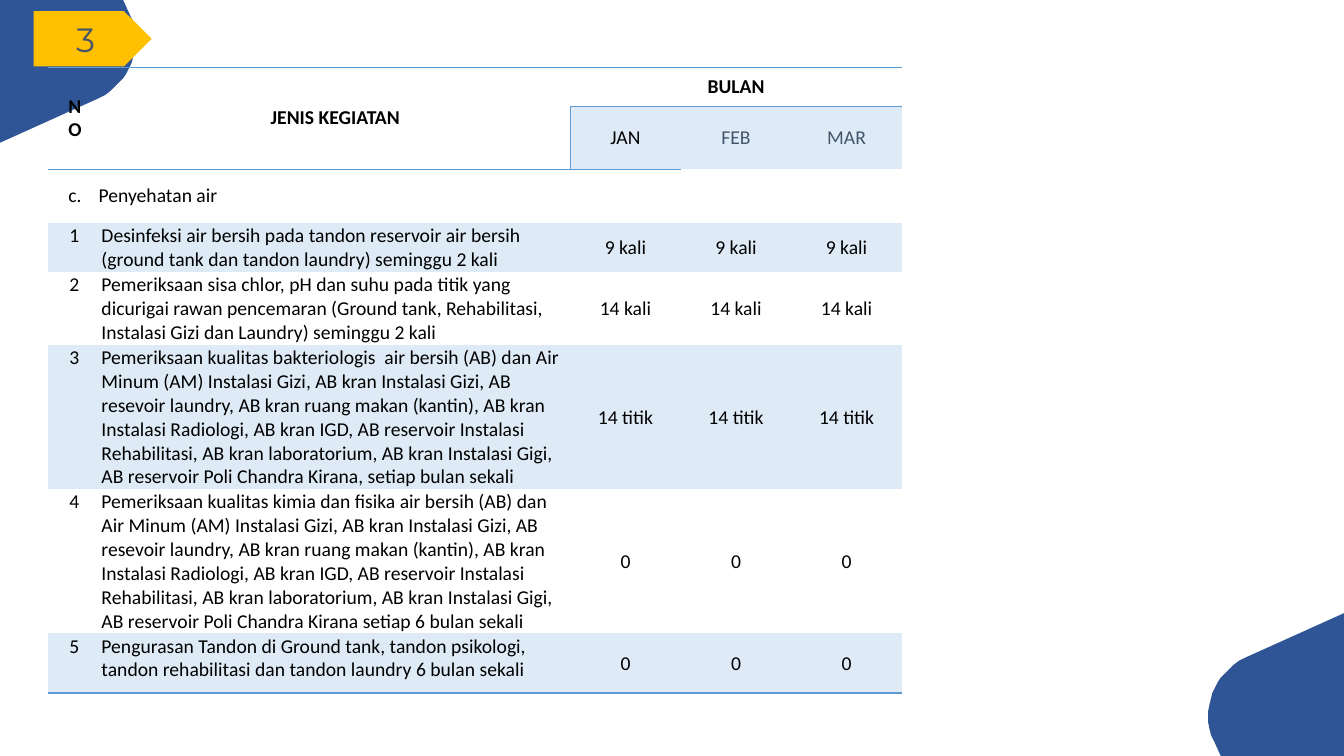
from pptx import Presentation
from pptx.dml.color import RGBColor
from pptx.enum.shapes import MSO_SHAPE as SHAPE
from pptx.enum.text import MSO_ANCHOR as ANCHOR, PP_ALIGN as ALIGN
from pptx.oxml.ns import qn
from pptx.util import Pt
from lxml.etree import SubElement

COLORS = {
    "navy": "2F5597", "gold": "FFC000", "slate": "44546A",
    "black": "000000", "line": "5B9BD5", "band": "DEEBF7",
}
PAGE_WIDTH, PAGE_HEIGHT = 960, 540
COLUMN_WIDTHS = [37.4, 335.5, 79, 79, 79]
ROW_HEIGHTS = [27.9, 45, 38.5, 34.7, 52.4, 103, 103, 42.5]
HEADER_MARGINS = (14.4, 5.4, 14.4, 5.4)
BODY_MARGINS = (0.7, 0.7, 0.7, 0)
MONTHS = ["JAN", "FEB", "MAR"]

# Activity and its target, the same in every month
ACTIVITIES = [
    ("Desinfeksi air bersih pada tandon reservoir air bersih (ground tank dan "
     "tandon laundry) seminggu 2 kali", "9 kali"),
    ("Pemeriksaan sisa chlor, pH dan suhu pada titik yang dicurigai rawan "
     "pencemaran (Ground tank, Rehabilitasi, Instalasi Gizi dan Laundry) "
     "seminggu 2 kali", "14 kali"),
    ("Pemeriksaan kualitas bakteriologis  air bersih (AB) dan Air Minum (AM) "
     "Instalasi Gizi, AB kran Instalasi Gizi, AB resevoir laundry, AB kran "
     "ruang makan (kantin), AB kran Instalasi Radiologi, AB kran IGD, AB "
     "reservoir Instalasi Rehabilitasi, AB kran laboratorium, AB kran "
     "Instalasi Gigi, AB reservoir Poli Chandra Kirana, setiap bulan sekali",
     "14 titik"),
    ("Pemeriksaan kualitas kimia dan fisika air bersih (AB) dan Air Minum (AM) "
     "Instalasi Gizi, AB kran Instalasi Gizi, AB resevoir laundry, AB kran "
     "ruang makan (kantin), AB kran Instalasi Radiologi, AB kran IGD, AB "
     "reservoir Instalasi Rehabilitasi, AB kran laboratorium, AB kran "
     "Instalasi Gigi, AB reservoir Poli Chandra Kirana setiap 6 bulan sekali",
     "0"),
    ("Pengurasan Tandon di Ground tank, tandon psikologi, tandon rehabilitasi "
     "dan tandon laundry 6 bulan sekali", "0"),
]


def color(name):
    return RGBColor.from_string(COLORS[name])


def write(frame, text, size=14, font="Calibri", ink="black", bold=False,
          align=ALIGN.CENTER):
    para = frame.paragraphs[0]
    para.alignment = align
    span = para.add_run()
    span.text = text
    span.font.size, span.font.name, span.font.bold = Pt(size), font, bold
    span.font.color.rgb = color(ink)
    return para


def paint(shape, fill):
    shape.fill.solid()
    shape.fill.fore_color.rgb = color(fill)
    shape.line.fill.background()
    shape.shadow.inherit = False


def curve(start, first, second, end, steps=16):
    """Points along a cubic curve, without its start."""
    points = []
    for step in range(1, steps + 1):
        t = step / steps
        weights = ((1 - t) ** 3, 3 * t * (1 - t) ** 2, 3 * t * t * (1 - t), t ** 3)
        points.append(tuple(
            sum(weight * value for weight, value in zip(weights, values))
            for values in zip(start, first, second, end)))
    return points


def add_corner(page, left, top, direction):
    """Rounded wedge in a page corner; direction -1 turns it by 180 degrees."""
    outline = [(0, 0), (88, 0), (93, 11)]
    outline += curve((93, 11), (103, 33), (93, 60), (71, 69.5)) + [(0, 102)]
    points = [(left + direction * x, top + direction * y) for x, y in outline]
    builder = page.shapes.build_freeform(*points[0], scale=Pt(1))
    builder.add_line_segments(points[1:], close=True)
    paint(builder.convert_to_shape(), "navy")


def add_number_tag(page, left, top, width, height):
    tag = page.shapes.add_shape(SHAPE.PENTAGON, Pt(left), Pt(top), Pt(width), Pt(height))
    paint(tag, "gold")
    tag.text_frame.vertical_anchor = ANCHOR.MIDDLE
    write(tag.text_frame, "3", size=24, font="Montserrat", ink="slate")


def format_cell(cell, edges="", banded=False, margins=BODY_MARGINS, anchor=ANCHOR.MIDDLE):
    """Draw the named edges (L, R, T, B), clear the others, and fill the cell."""
    properties = cell._tc.get_or_add_tcPr()
    for side in "LRTB":
        edge = SubElement(properties, qn(f"a:ln{side}"), w=str(Pt(1)))
        if side in edges:
            fill = SubElement(edge, qn("a:solidFill"))
            SubElement(fill, qn("a:srgbClr"), val=COLORS["line"])
        else:
            SubElement(edge, qn("a:noFill"))
    if banded:
        cell.fill.solid()
        cell.fill.fore_color.rgb = color("band")
    else:
        cell.fill.background()
    (cell.margin_left, cell.margin_top,
     cell.margin_right, cell.margin_bottom) = map(Pt, margins)
    cell.vertical_anchor = anchor


def fill_header(table):
    for column in range(5):
        is_month = column >= 2
        format_cell(table.cell(0, column), "TB" if is_month else "T",
                    margins=HEADER_MARGINS)
        format_cell(table.cell(1, column),
                    "LT" if column == 2 else "T" if is_month else "B",
                    banded=is_month, margins=HEADER_MARGINS)
    for column, heading in enumerate(["NO", "JENIS KEGIATAN", "BULAN"]):
        end = (0, 4) if heading == "BULAN" else (1, column)
        table.cell(0, column).merge(table.cell(*end))
        write(table.cell(0, column).text_frame, heading, bold=True)
    for column, month in enumerate(MONTHS, 2):
        write(table.cell(1, column).text_frame, month,
              ink="black" if month == "JAN" else "slate")


def fill_section(table):
    for column in range(5):
        format_cell(table.cell(2, column), "T" if column < 3 else "",
                    margins=HEADER_MARGINS)
    table.cell(2, 0).merge(table.cell(2, 2))
    para = write(table.cell(2, 0).text_frame, "c.\tPenyehatan air", align=ALIGN.LEFT)
    # Hanging indent: the tab leads to the left margin
    properties = para._p.get_or_add_pPr()
    properties.set("marL", str(Pt(21.6)))
    properties.set("indent", str(-Pt(21.6)))


def fill_activities(table):
    for number, (activity, target) in enumerate(ACTIVITIES, 1):
        values = [str(number), activity] + [target] * len(MONTHS)
        for column, value in enumerate(values):
            cell = table.cell(number + 2, column)
            format_cell(cell, "B" if number == len(ACTIVITIES) else "",
                        banded=number % 2 == 1,
                        anchor=ANCHOR.TOP if column < 2 else ANCHOR.MIDDLE)
            write(cell.text_frame, value,
                  align=ALIGN.LEFT if column == 1 else ALIGN.CENTER)


def add_schedule(page, left, top):
    table = page.shapes.add_table(
        len(ROW_HEIGHTS), len(COLUMN_WIDTHS), Pt(left), Pt(top),
        Pt(sum(COLUMN_WIDTHS)), Pt(sum(ROW_HEIGHTS))).table
    table.first_row = table.horz_banding = False
    for column, width in zip(table.columns, COLUMN_WIDTHS):
        column.width = Pt(width)
    for row, height in zip(table.rows, ROW_HEIGHTS):
        row.height = Pt(height)
    fill_header(table)
    fill_section(table)
    fill_activities(table)


def main():
    deck = Presentation()
    deck.slide_width, deck.slide_height = Pt(PAGE_WIDTH), Pt(PAGE_HEIGHT)
    page = deck.slides.add_slide(deck.slide_layouts[6])
    # Corner decoration
    add_corner(page, PAGE_WIDTH, PAGE_HEIGHT, -1)
    add_corner(page, 0, 0, 1)
    # Content
    add_number_tag(page, 24, 8, 84.3, 39.5)
    add_schedule(page, 34.4, 48)
    deck.save("out.pptx")


if __name__ == "__main__":
    main()
